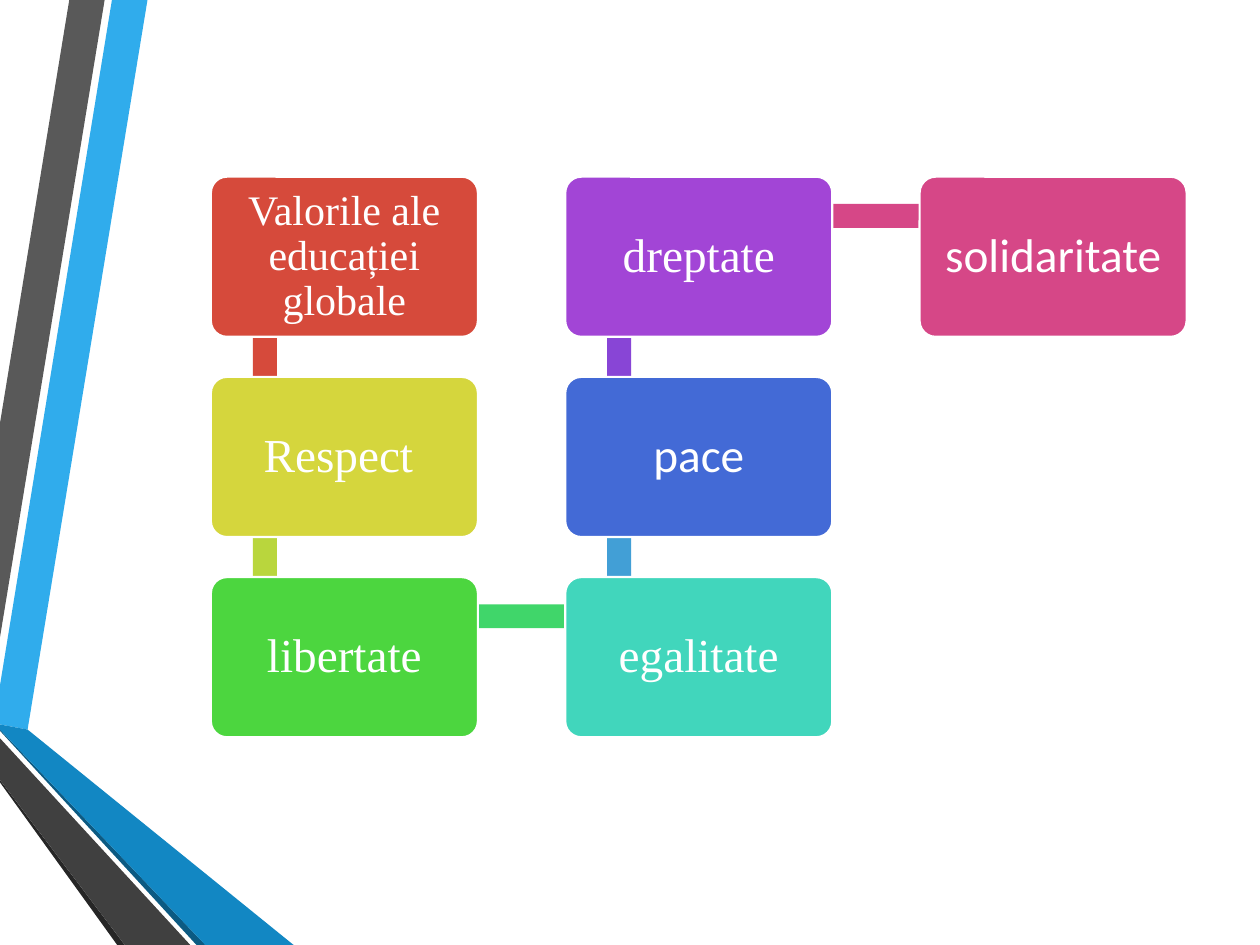
"""Builds a slide showing the values of global education as a winding chain of cards."""
from pptx import Presentation
from pptx.dml.color import RGBColor
from pptx.enum.shapes import MSO_SHAPE
from pptx.enum.text import MSO_ANCHOR, PP_ALIGN
from pptx.util import Pt

RECTANGLE = MSO_SHAPE.RECTANGLE
ROUNDED = MSO_SHAPE.ROUNDED_RECTANGLE
MIDDLE = MSO_ANCHOR.MIDDLE
CENTER = PP_ALIGN.CENTER

WHITE = RGBColor(0xFF, 0xFF, 0xFF)
SKY = RGBColor(0x30, 0xAC, 0xEC)
BLUE = RGBColor(0x12, 0x87, 0xC3)
NAVY = RGBColor(0x0C, 0x5A, 0x82)
GRAY = RGBColor(0x59, 0x59, 0x59)
CHARCOAL = RGBColor(0x40, 0x40, 0x40)
BLACK = RGBColor(0x26, 0x26, 0x26)
RED = RGBColor(0xD6, 0x4A, 0x3B)
YELLOW = RGBColor(0xD5, 0xD6, 0x3D)
LIME = RGBColor(0xB9, 0xD6, 0x3D)
GREEN = RGBColor(0x4C, 0xD6, 0x3F)
MINT = RGBColor(0x40, 0xD6, 0x6A)
TEAL = RGBColor(0x41, 0xD6, 0xBC)
AZURE = RGBColor(0x42, 0x9F, 0xD6)
COBALT = RGBColor(0x43, 0x6A, 0xD6)
VIOLET = RGBColor(0x88, 0x45, 0xD6)
PURPLE = RGBColor(0xA2, 0x45, 0xD6)
PINK = RGBColor(0xD6, 0x47, 0x87)

SERIF = "Times New Roman"
SANS = "Calibri"

RIBBONS = [
    (SKY, [(0, 391.7), (0, 414), (15.8, 416.9), (84.3, 0), (64, 0)]),
    (GRAY, [(59.8, 0), (39.6, 0), (0, 241.9), (0, 364.3)]),
    (BLACK, [(0, 445.7), (0, 447.1), (67, 540), (71.3, 540)]),
    (NAVY, [(0, 416.9), (0, 417.6), (112.3, 540), (117.4, 540)]),
    (BLUE, [(0, 416.9), (117.4, 540), (167.8, 540), (15.8, 416.9), (0, 414)]),
    (CHARCOAL, [(0, 445.7), (71.3, 540), (108.7, 540), (0, 421.9)]),
]

# Column, row, fill, text, font, size
CARDS = [
    (0, 0, RED, "Valorile ale educației globale", SERIF, 24),
    (0, 1, YELLOW, "Respect ", SERIF, 27),
    (0, 2, GREEN, "libertate", SERIF, 27),
    (1, 2, TEAL, "egalitate", SERIF, 27),
    (1, 1, COBALT, "pace", SANS, 27),
    (1, 0, PURPLE, "dreptate", SERIF, 27),
    (2, 0, PINK, "solidaritate", SANS, 27),
]
BAR_FILLS = [RED, LIME, MINT, AZURE, VIOLET, PINK]

GRID_LEFT, GRID_TOP = 120.5, 101
COLUMN_STEP, ROW_STEP = 202.5, 114.4
CARD_WIDTH, CARD_HEIGHT = 152.6, 91.5
BAR_THICKNESS = 13.7
BAR_INSET_X, BAR_INSET_Y = 30.8, 15.5


def write_text(box, text, font=SERIF, size=27, color=WHITE, inset=8):
    frame = box.text_frame
    frame.word_wrap = True
    frame.vertical_anchor = MIDDLE
    frame.margin_left = frame.margin_right = Pt(inset)
    frame.margin_top = frame.margin_bottom = Pt(inset)
    para = frame.paragraphs[0]
    para.alignment = CENTER
    para.line_spacing = 0.9
    span = para.add_run()
    span.text = text
    span.font.name = font
    span.font.size = Pt(size)
    span.font.color.rgb = color


def cell_corner(column, row):
    return GRID_LEFT + column * COLUMN_STEP, GRID_TOP + row * ROW_STEP


class ChainSlide:
    """Holds the card style and the slide being drawn."""

    def __init__(self, page, outline=WHITE, outline_width=1.25):
        self.page = page
        self.outline = outline
        self.outline_width = outline_width

    def paint(self, shape, fill):
        shape.shadow.inherit = False
        shape.fill.solid()
        shape.fill.fore_color.rgb = fill
        shape.line.fill.background()
        return shape

    def ribbon(self, fill, corners):
        points = [(Pt(x), Pt(y)) for x, y in corners]
        builder = self.page.shapes.build_freeform(*points[0], scale=1.0)
        builder.add_line_segments(points[1:], close=True)
        self.paint(builder.convert_to_shape(), fill)

    def block(self, kind, left, top, width, height, fill):
        shape = self.page.shapes.add_shape(kind, Pt(left), Pt(top), Pt(width), Pt(height))
        return self.paint(shape, fill)

    def bar(self, start, end, fill):
        left, top = cell_corner(min(start[0], end[0]), min(start[1], end[1]))
        if start[1] == end[1]:
            self.block(RECTANGLE, left + BAR_INSET_X, top + BAR_INSET_Y,
                       COLUMN_STEP, BAR_THICKNESS, fill)
            return
        length = ROW_STEP
        bar_left = left + BAR_INSET_X - length / 2
        bar_top = top + BAR_INSET_Y + (length + BAR_THICKNESS) / 2
        shape = self.block(RECTANGLE, bar_left, bar_top, length, BAR_THICKNESS, fill)
        shape.rotation = 90 if end[1] > start[1] else 270

    def card(self, column, row, fill, text, font, size):
        box = self.block(ROUNDED, *cell_corner(column, row), CARD_WIDTH, CARD_HEIGHT, fill)
        box.adjustments[0] = 0.1
        box.line.color.rgb = self.outline
        box.line.width = Pt(self.outline_width)
        write_text(box, text, font=font, size=size)


def main():
    deck = Presentation()
    deck.slide_width, deck.slide_height = Pt(720), Pt(540)
    chain = ChainSlide(deck.slides.add_slide(deck.slide_layouts[6]))
    for fill, corners in RIBBONS:
        chain.ribbon(fill, corners)
    for card, following, fill in zip(CARDS, CARDS[1:], BAR_FILLS):
        chain.bar(card[:2], following[:2], fill)
    for card in CARDS:
        chain.card(*card)
    deck.save("out.pptx")


if __name__ == "__main__":
    main()
